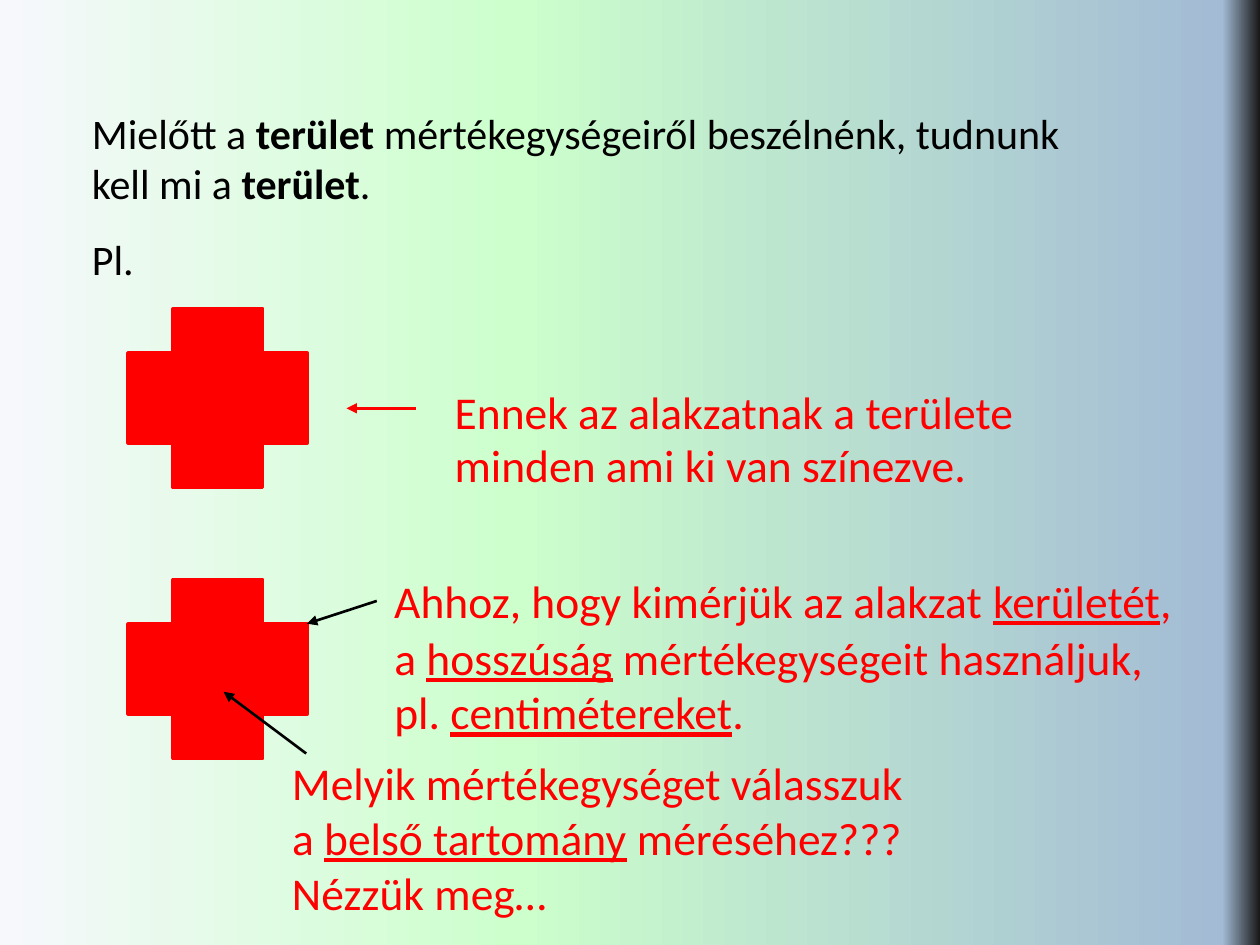
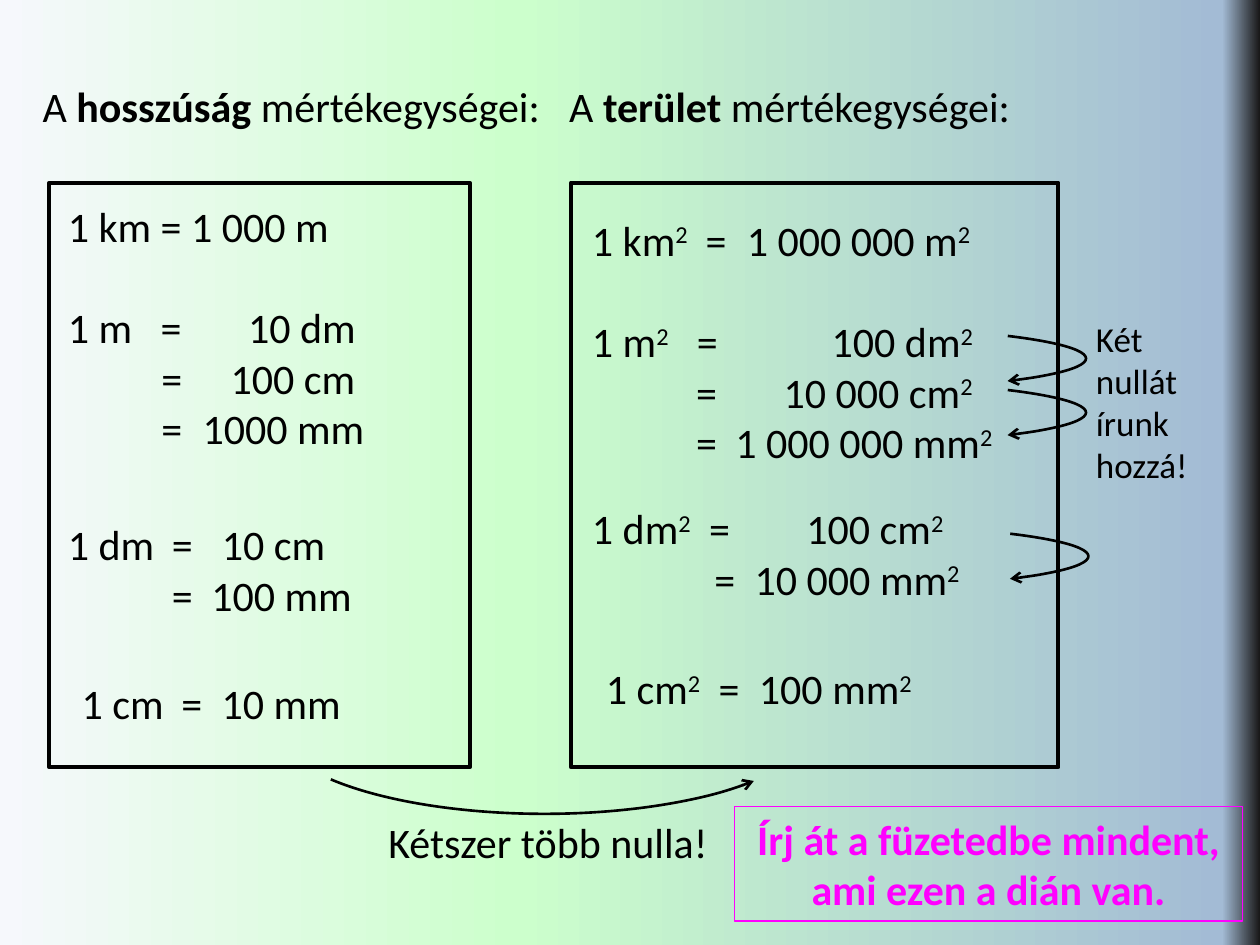
"""Builds two slides on the units of length and area."""
from lxml import etree
from pptx import Presentation
from pptx.dml.color import RGBColor
from pptx.enum.shapes import MSO_CONNECTOR, MSO_SHAPE
from pptx.enum.text import MSO_AUTO_SIZE, PP_ALIGN
from pptx.oxml.ns import qn
from pptx.util import Pt

STRAIGHT = MSO_CONNECTOR.STRAIGHT
CROSS, RECTANGLE, ARC = MSO_SHAPE.CROSS, MSO_SHAPE.RECTANGLE, MSO_SHAPE.ARC
LEFT, CENTER = PP_ALIGN.LEFT, PP_ALIGN.CENTER
FIT_SHAPE = MSO_AUTO_SIZE.SHAPE_TO_FIT_TEXT

FONT = "Calibri"
BLACK, RED, MAGENTA = "000000", "FF0000", "FF00FF"
BACKGROUND = [(0, "F6F8FC"), (41, "CCFFCC"), (97, "A3BBD5"), (100, "181717")]
BLANK_LAYOUT = 6
LINE_GAP = 29.3


def rgb(color):
    return RGBColor.from_string(color)


def points(*values):
    return [Pt(value) for value in values]


def write(frame, lines, size=24, color=BLACK, bold=False, align=LEFT,
          emphasis="bold", tabs=(), gaps=()):
    """Fill a frame; text between asterisks takes the emphasis."""
    for index, line in enumerate(lines):
        paragraph = frame.add_paragraph() if index else frame.paragraphs[0]
        paragraph.alignment = align
        if index in gaps:
            paragraph.space_before = Pt(LINE_GAP)
        if index < len(tabs) and tabs[index]:
            add_tabs(paragraph, tabs[index])
        for position, part in enumerate(line.split("*")):
            if not part:
                continue
            run = paragraph.add_run()
            run.text = part
            font = run.font
            font.name, font.size, font.bold = FONT, Pt(size), bold
            font.color.rgb = rgb(color)
            if position % 2:
                if emphasis == "superscript":
                    run._r.get_or_add_rPr().set("baseline", "30000")
                else:
                    setattr(font, emphasis, True)


def add_tabs(paragraph, positions):
    tab_list = etree.SubElement(paragraph._p.get_or_add_pPr(), qn("a:tabLst"))
    for position in positions:
        etree.SubElement(tab_list, qn("a:tab"), pos=str(Pt(position)), algn="l")


def add_arrowhead(line, kind):
    etree.SubElement(line._get_or_add_ln(), qn("a:tailEnd"), type=kind)


class Deck:
    """Holds the shared style and the current slide."""

    def __init__(self):
        self.presentation = Presentation()
        self.presentation.slide_width = Pt(720)
        self.presentation.slide_height = Pt(540)
        self.slide = None
        self.paint_background()

    def paint_background(self):
        master = self.presentation.slide_master
        fill = master.background.fill
        fill.gradient()
        fill.gradient_angle = 0
        stops = master._element.find(".//" + qn("a:gsLst"))
        stops.clear()
        for percent, color in BACKGROUND:
            stop = etree.SubElement(stops, qn("a:gs"), pos=str(percent * 1000))
            etree.SubElement(stop, qn("a:srgbClr"), val=color)

    def new_slide(self):
        layout = self.presentation.slide_layouts[BLANK_LAYOUT]
        self.slide = self.presentation.slides.add_slide(layout)

    def text(self, left, top, width, height, lines, wrap=False, **style):
        box = self.slide.shapes.add_textbox(*points(left, top, width, height))
        frame = box.text_frame
        frame.word_wrap = wrap
        frame.auto_size = FIT_SHAPE
        write(frame, lines, **style)

    def shape(self, kind, left, top, width, height, color=BLACK, weight=2.25,
              fill=None):
        shape = self.slide.shapes.add_shape(kind, *points(left, top, width, height))
        shape.shadow.inherit = False
        shape.line.color.rgb = rgb(color)
        shape.line.width = Pt(weight)
        if fill:
            shape.fill.solid()
            shape.fill.fore_color.rgb = rgb(fill)
        else:
            shape.fill.background()
        return shape

    def arc(self, left, top, width, height, start, end):
        arc = self.shape(ARC, left, top, width, height, weight=1.5)
        arc.adjustments[0], arc.adjustments[1] = start * 0.6, end * 0.6
        return arc

    def arrow(self, start, end, color=BLACK):
        connector = self.slide.shapes.add_connector(
            STRAIGHT, *points(*start, *end))
        connector.line.color.rgb = rgb(color)
        connector.line.width = Pt(1.5)
        add_arrowhead(connector.line, "triangle")
        etree.SubElement(connector._element.spPr, qn("a:effectLst"))


def build_area_slide(deck):
    deck.new_slide()
    deck.text(45.4, 57.6, 594, 65.5, [
        "Mielőtt a *terület* mértékegységeiről beszélnénk, "
        "tudnunk kell mi a *terület*."], wrap=True)
    deck.text(45.4, 129.6, 38.9, 36.7, ["Pl."])
    for top in (176.4, 331.2):
        deck.shape(CROSS, 73.4, top, 102.2, 102.2, color=RED, fill=RED)
    notes = [
        (252.7, 216, 337, ["Ennek az alakzatnak a területe"]),
        (252.7, 246.2, 309.6, ["minden ami ki van színezve."]),
        (218.2, 324, 463, ["Ahhoz, hogy kimérjük az alakzat *kerületét*,"]),
        (218.2, 356.4, 445.7, ["a *hosszúság* mértékegységeit használjuk,",
                               "pl. *centimétereket*."]),
        (159.8, 427.7, 371.5, ["Melyik mértékegységet válasszuk"]),
        (159.8, 459.4, 365.8, ["a *belső tartomány* méréséhez???"]),
        (159.8, 491, 161.3, ["Nézzük meg…"]),
    ]
    for left, top, width, lines in notes:
        deck.text(left, top, width, 7.2 + 31.7 * len(lines), lines,
                  size=26, color=RED, emphasis="underline")
    deck.arrow((237.6, 233.3), (198, 233.3), RED)
    deck.arrow((215.3, 343.4), (175.4, 356.4))
    deck.arrow((175, 430.6), (127.8, 395.3))


def build_units_slide(deck):
    deck.new_slide()
    deck.text(17.3, 42.5, 299.5, 36.7, ["A *hosszúság* mértékegységei:"])
    deck.text(318.2, 42.5, 267.1, 36.7, ["A *terület* mértékegységei:"])
    for left, width in ((28.1, 240.5), (326.2, 278.6)):
        deck.shape(RECTANGLE, left, 104.4, width, 334.1)

    conversions = [
        (31.7, 110.9, 222.5, 152.6,
         ["1 km = 1 000 m", "1 m\t=\t10 dm", "\t=\t100 cm", "\t=\t1000 mm"],
         [(), (53, 103), (53.5, 93), (53.5, 77)], (1,)),
        (31.7, 293, 222.5, 65.5, ["1 dm\t=\t10 cm", "\t=\t100 mm"],
         [(59.5, 88), (59.5, 82)], ()),
        (39.6, 383.8, 177.1, 36.7, ["1 cm\t=\t10 mm"], [(57, 80)], ()),
        (331.2, 118.8, 254.2, 152.6,
         ["1 km*2*\t=\t1 000 000 m*2*", "1 m*2*\t=\t100 dm*2*",
          "\t=\t10 000 cm*2*", "\t=\t1 000 000 mm*2*"],
         [(65, 88.5), (60, 137), (59.5, 109.5), (59.5, 82)], (1,)),
        (331.2, 283.7, 230.4, 65.5,
         ["1 dm*2*\t=\t100 cm*2*", "\t=\t10 000 mm*2*"],
         [(67, 122.5), (70, 93)], ()),
        (339.1, 375.1, 222.5, 36.7, ["1 cm*2*\t=\t100 mm*2*"],
         [(64.5, 87.5)], ()),
    ]
    for left, top, width, height, lines, tabs, gaps in conversions:
        deck.text(left, top, width, height, lines, wrap=True,
                  emphasis="superscript", tabs=tabs, gaps=gaps)

    for left, top in ((309.6, 186.5), (309.6, 217.4), (311, 299.5)):
        step = deck.arc(left, top, 311, 36.7, 353.37, 6.65)
        add_arrowhead(step.line, "arrow")
    deck.text(619.2, 177.8, 90.7, 104.4, ["Két nullát írunk hozzá!"],
              wrap=True, size=20)

    sweep = deck.arc(155.5, 361.4, 311, 103.7, 15.43, 165.23)
    etree.SubElement(sweep.line._get_or_add_ln(), qn("a:headEnd"), type="arrow")
    deck.text(213.8, 463, 198.7, 36.7, ["Kétszer több nulla!"], align=CENTER)

    task = deck.shape(RECTANGLE, 419.8, 460.8, 290.2, 65.5, MAGENTA, 0.75)
    task.text_frame.word_wrap = True
    write(task.text_frame, ["Írj át a füzetedbe mindent, ami ezen a dián van."],
          color=MAGENTA, bold=True, align=CENTER)


def main():
    deck = Deck()
    build_area_slide(deck)
    build_units_slide(deck)
    deck.presentation.save("out.pptx")


if __name__ == "__main__":
    main()
